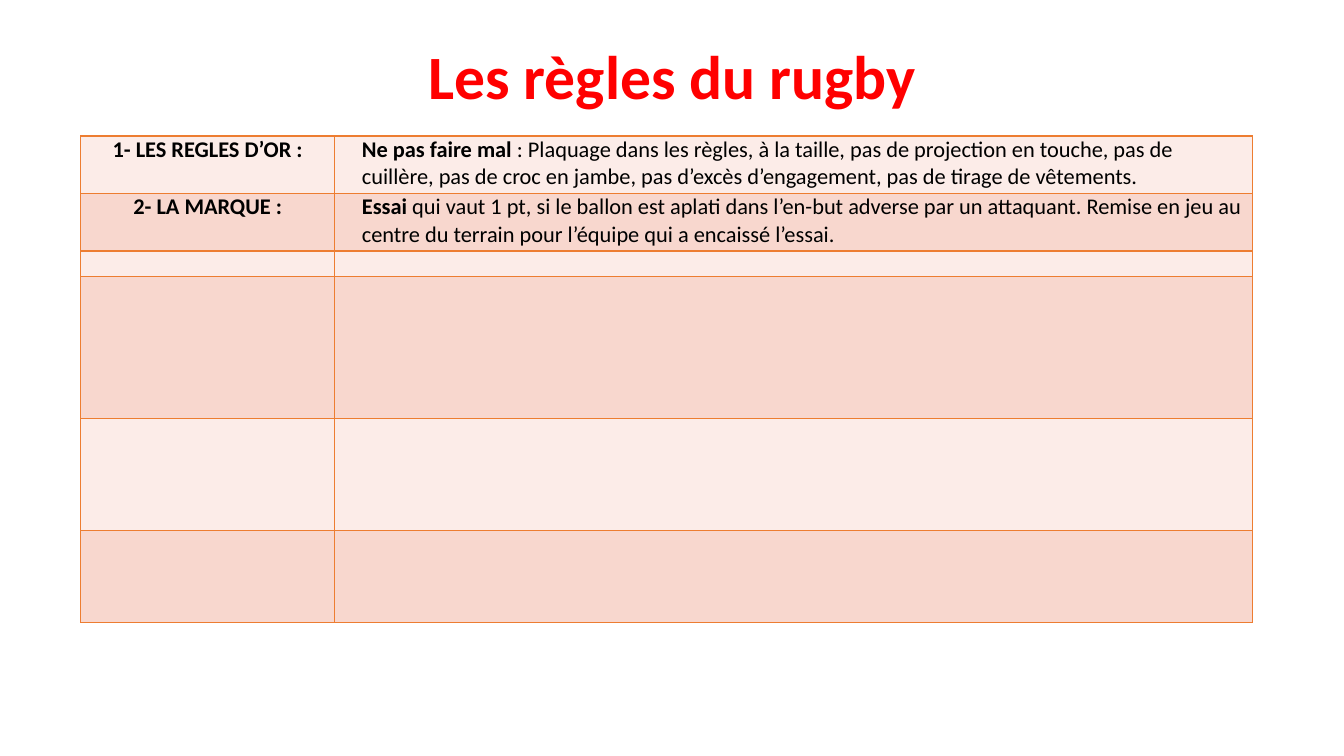
from dataclasses import dataclass

from lxml import etree
from pptx import Presentation
from pptx.dml.color import RGBColor
from pptx.enum.text import MSO_ANCHOR, PP_ALIGN
from pptx.oxml.ns import qn
from pptx.util import Inches, Pt

CENTER, LEFT = PP_ALIGN.CENTER, PP_ALIGN.LEFT
MIDDLE = MSO_ANCHOR.MIDDLE


@dataclass(frozen=True)
class Theme:
    """Colours, font and type sizes of the slide."""
    font: str = "Calibri"
    red: str = "FF0000"
    ink: str = "000000"
    line: str = "ED7D31"
    bands: tuple = ("FCECE8", "F8D7CE")
    title: int = 44
    body: int = 16
    small: int = 12


class Deck:
    """Holds the theme and the current slide."""

    def __init__(self, theme):
        """Start a one-slide deck."""
        self.theme = theme
        self.show = Presentation()
        self.show.slide_width = Inches(13.33)
        self.show.slide_height = Inches(7.5)
        self.slide = self.show.slides.add_slide(self.show.slide_layouts[6])

    def text(self, para, runs, size, color, align):
        """Fill a paragraph with (text, bold) runs."""
        para.alignment = align
        para.font.name = self.theme.font
        para.font.size = Pt(size)
        para.font.color.rgb = RGBColor.from_string(color)
        for words, bold in runs:
            run = para.add_run()
            run.text = words
            run.font.bold = bold

    def title(self, words, left, top, width, height):
        """Add the centred title."""
        box = self.slide.shapes.add_textbox(
            Inches(left), Inches(top), Inches(width), Inches(height))
        frame = box.text_frame
        frame.word_wrap = True
        frame.vertical_anchor = MIDDLE
        para = frame.paragraphs[0]
        para.line_spacing = 0.9
        self.text(para, [(words, True)], self.theme.title, self.theme.red, CENTER)

    def border(self, cell):
        """Draw a thin line on all four sides of a cell."""
        props = cell._tc.get_or_add_tcPr()
        for spot, side in enumerate(("a:lnL", "a:lnR", "a:lnT", "a:lnB")):
            line = etree.Element(qn(side), w=str(Pt(1)))
            fill = etree.SubElement(line, qn("a:solidFill"))
            etree.SubElement(fill, qn("a:srgbClr"), val=self.theme.line)
            props.insert(spot, line)

    def cell(self, cell, runs, band, align):
        """Style one cell and set its text."""
        cell.margin_left = cell.margin_right = Inches(0.07)
        cell.margin_top = cell.margin_bottom = 0
        cell.fill.solid()
        cell.fill.fore_color.rgb = RGBColor.from_string(band)
        self.border(cell)
        para = cell.text_frame.paragraphs[0]
        if not runs:
            etree.SubElement(para._p, qn("a:endParaRPr"),
                             sz=str(self.theme.small * 100))
            return
        para.space_before = Pt(6)
        self.text(para, runs, self.theme.body, self.theme.ink, align)
        if align == LEFT:
            para._p.get_or_add_pPr().set("marL", str(Inches(0.2)))

    def table(self, rules, left, top, widths, heights):
        """Add the banded table, leaving rows without a rule empty."""
        grid = self.slide.shapes.add_table(
            len(heights), len(widths), Inches(left), Inches(top),
            Inches(sum(widths)), Inches(sum(heights))).table
        grid.first_row = grid.horz_banding = False
        for col, width in zip(grid.columns, widths):
            col.width = Inches(width)
        for num, height in enumerate(heights):
            grid.rows[num].height = Inches(height)
            band = self.theme.bands[num % 2]
            row = rules[num] if num < len(rules) else ([], [])
            for col, (runs, align) in enumerate(zip(row, (CENTER, LEFT))):
                self.cell(grid.cell(num, col), runs, band, align)


RULES = [
    ([("1- LES REGLES D’OR :", True)],
     [("Ne pas faire mal", True),
      (" : Plaquage dans les règles, à la taille, pas de projection en touche, "
       "pas de cuillère, pas de croc en jambe, pas d’excès d’engagement, "
       "pas de tirage de vêtements.", False)]),
    ([("2- LA MARQUE :", True)],
     [("Essai", True),
      (" qui vaut 1 pt, si le ballon est aplati dans l’en-but adverse par un "
       "attaquant. Remise en jeu au centre du terrain pour l’équipe qui a "
       "encaissé l’essai.", False)]),
]


def main():
    """Build and save the slide."""
    deck = Deck(Theme())
    deck.title("Les règles du rugby", 0.92, 0.4, 11.5, 0.78)
    deck.table(RULES, 0.8, 1.35, (2.52, 9.1),
               (0.57, 0.57, 0.25, 1.41, 1.11, 0.92))
    deck.show.save("out.pptx")


if __name__ == "__main__":
    main()
